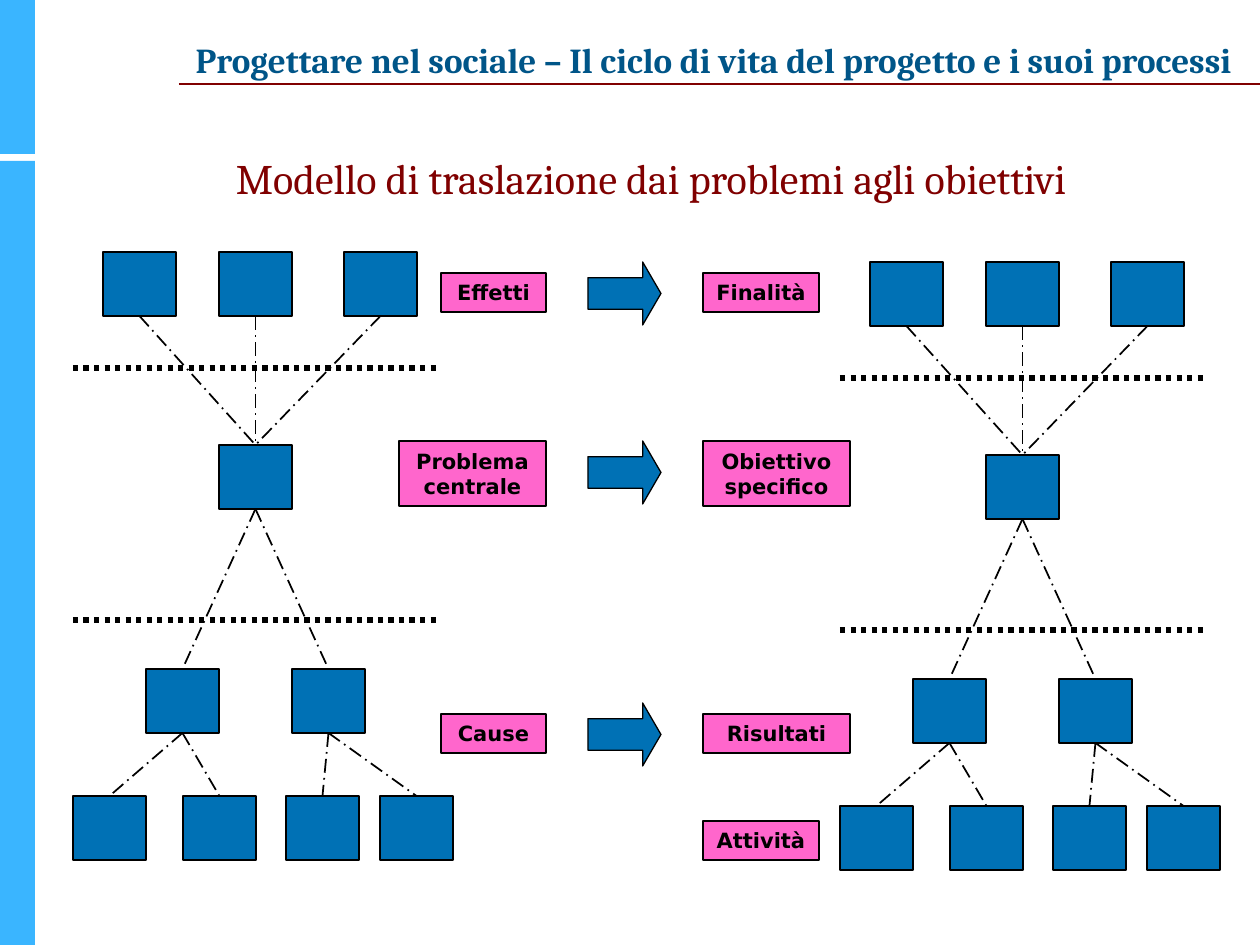
from pptx import Presentation
from pptx.dml.color import RGBColor
from pptx.enum.dml import MSO_LINE
from pptx.enum.shapes import MSO_CONNECTOR, MSO_SHAPE
from pptx.enum.text import MSO_ANCHOR, PP_ALIGN
from pptx.oxml.ns import qn
from pptx.util import Pt
from lxml import etree

SCALE = 914400 / 126
COLORS = {
    "sky": "3AB5FF", "blue": "0071B5", "pink": "FF66CC",
    "maroon": "800000", "header": "005588", "black": "000000",
}
BOX_W, BOX_H = 73, 64
TOP, BOTTOM = 0, 2  # connection sites of a rectangle

# Tree rows: top edge and left edges, relative to the tree's corner
TREE_ROWS = {
    "upper": (0, (30, 146, 271)),
    "core": (193, (146,)),
    "middle": (417, (73, 219)),
    "lower": (544, (0, 110, 213, 307)),
}
# Links run from the bottom of one box to the top of another
TREE_LINKS = [
    (("upper", 0), ("core", 0)), (("upper", 1), ("core", 0)),
    (("upper", 2), ("core", 0)),
    (("core", 0), ("middle", 0)), (("core", 0), ("middle", 1)),
    (("middle", 0), ("lower", 0)), (("middle", 0), ("lower", 1)),
    (("middle", 1), ("lower", 2)), (("middle", 1), ("lower", 3)),
]
TREE_DIVIDERS = (116, 368)
TREE_CORNERS = ((73, 252), (840, 262))

LABELS = [
    ("Effetti", 441, 273, 105, 39),
    ("Problema centrale", 399, 441, 147, 65),
    ("Cause", 441, 714, 105, 39),
    ("Finalità", 703, 273, 116, 39),
    ("Obiettivo specifico", 703, 441, 147, 65),
    ("Risultati", 703, 714, 147, 39),
    ("Attività", 703, 821, 116, 39),
]
ARROW_TOPS = (262, 441, 703)


def px(length):
    return round(length * SCALE)


def color(name):
    return RGBColor.from_string(COLORS[name])


def add_block(page, kind, left, top, width, height, fill, outline=None):
    block = page.shapes.add_shape(kind, px(left), px(top), px(width), px(height))
    block.shadow.inherit = False
    block.fill.solid()
    block.fill.fore_color.rgb = color(fill)
    if outline:
        block.line.color.rgb = color("black")
        block.line.width = Pt(outline)
    else:
        block.line.fill.background()
    return block


def add_line(page, start, end, width, line_color="black", dash=None):
    line = page.shapes.add_connector(
        MSO_CONNECTOR.STRAIGHT, *(px(value) for value in (*start, *end)))
    line.line.color.rgb = color(line_color)
    line.line.width = Pt(width)
    if dash:
        line.line.dash_style = dash
    etree.SubElement(line._element.spPr, qn("a:effectLst"))
    return line


def write(shape, text, font, size, text_color, bold=False,
          anchor=MSO_ANCHOR.MIDDLE, wrap=True):
    frame = shape.text_frame
    frame.word_wrap = wrap
    frame.vertical_anchor = anchor
    para = frame.paragraphs[0]
    para.alignment = PP_ALIGN.CENTER
    span = para.add_run()
    span.text = text
    span.font.name = font
    span.font.size = Pt(size)
    span.font.bold = bold
    span.font.color.rgb = color(text_color)
    return para


def add_text(page, left, top, width, height, *args, **options):
    box = page.shapes.add_textbox(px(left), px(top), px(width), px(height))
    return write(box, *args, **options)


def add_label(page, text, left, top, width, height):
    label = add_block(page, MSO_SHAPE.RECTANGLE, left, top, width, height, "pink", 1)
    write(label, text, "DejaVu Sans", 12, "black", bold=True)


def add_arrow(page, left, top):
    arrow = add_block(page, MSO_SHAPE.RIGHT_ARROW, left, top, 73, 63, "blue", 0.75)
    arrow.adjustments[0] = 0.5
    arrow.adjustments[1] = 0.29


def add_tree(page, left, top):
    boxes = {}
    for row, (row_top, columns) in TREE_ROWS.items():
        for index, column in enumerate(columns):
            boxes[row, index] = add_block(
                page, MSO_SHAPE.RECTANGLE, left + column, top + row_top,
                BOX_W, BOX_H, "blue", 1)
    for above, below in TREE_LINKS:
        link = add_line(page, (left, top), (left, top), 1,
                        dash=MSO_LINE.LONG_DASH_DOT)
        link.begin_connect(boxes[above], BOTTOM)
        link.end_connect(boxes[below], TOP)
    for offset in TREE_DIVIDERS:
        add_line(page, (left, top + offset), (left + 367, top + offset), 3,
                 dash=MSO_LINE.ROUND_DOT)


def main():
    deck = Presentation()
    deck.slide_width, deck.slide_height = px(1260), px(945)
    page = deck.slides.add_slide(deck.slide_layouts[6])

    # Side band and header
    for top, height in ((161, 784), (0, 154)):
        add_block(page, MSO_SHAPE.RECTANGLE, 0, top, 35, height, "sky")
    add_line(page, (179, 84), (1260, 84), 1.5, "maroon")
    add_text(page, 169, 32, 1090, 88,
             "Progettare nel sociale – Il ciclo di vita del progetto e i suoi processi",
             "Cambria", 20, "header", bold=True, anchor=MSO_ANCHOR.TOP, wrap=False)

    # Title
    title = add_text(page, 42, 126, 1218, 84,
                     "Modello di traslazione dai problemi agli obiettivi",
                     "Cambria", 24, "maroon", anchor=MSO_ANCHOR.BOTTOM)
    title.line_spacing = 0.9

    # Problem tree and objective tree
    for left, top in TREE_CORNERS:
        add_tree(page, left, top)

    # Level names and the arrows between them
    for label in LABELS:
        add_label(page, *label)
    for top in ARROW_TOPS:
        add_arrow(page, 588, top)

    deck.save("out.pptx")


if __name__ == "__main__":
    main()
